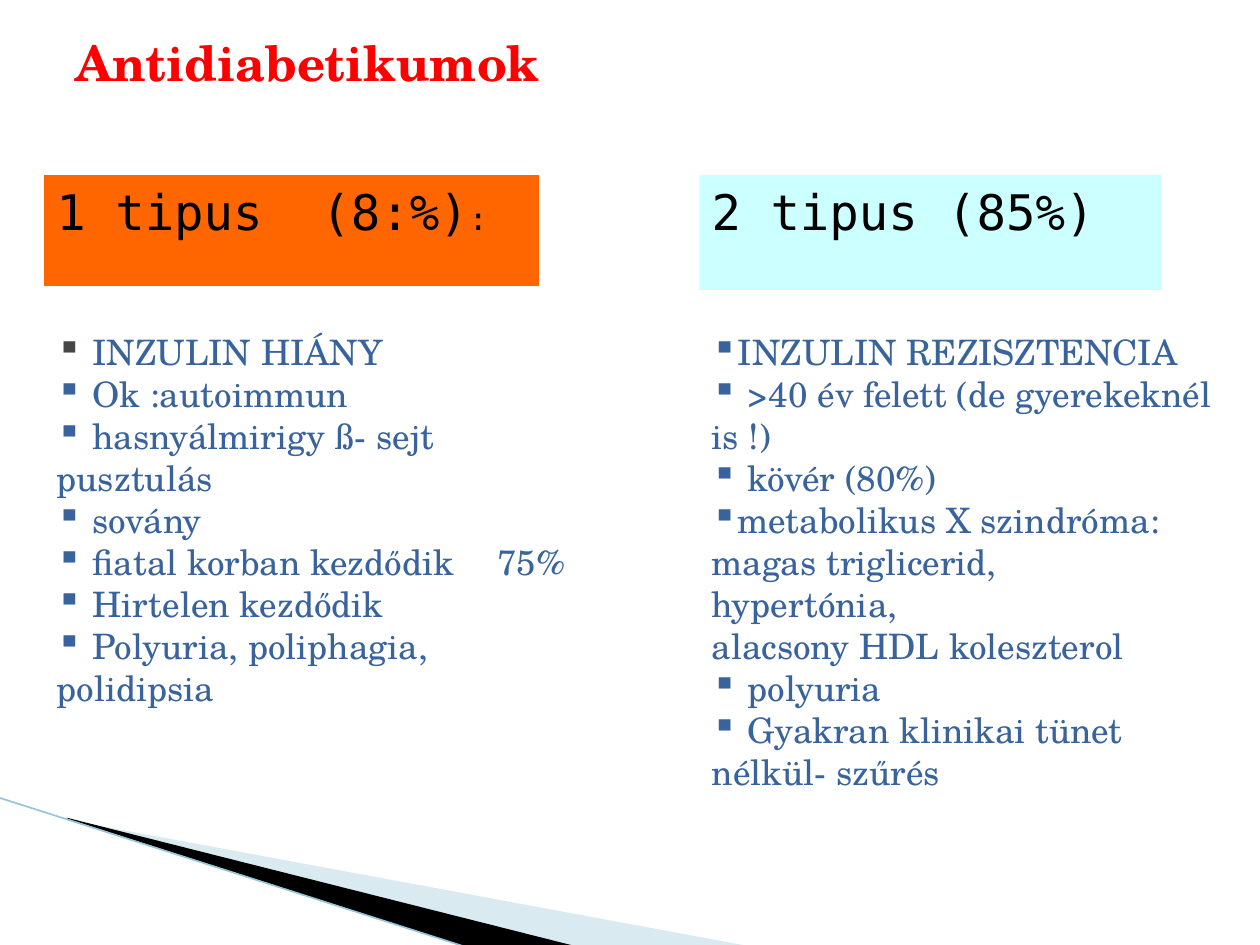
from lxml import etree
from pptx import Presentation
from pptx import util as u
from pptx.dml.color import RGBColor
from pptx.enum import shapes, text
from pptx.oxml.ns import qn

SERIF = "TeX Gyre Schola"
MONO = "DejaVu Sans Mono"
BLUE = "39639D"
BULLET = "▪"

TYPE_1 = [
    "INZULIN HIÁNY",
    "Ok :autoimmun",
    "hasnyálmirigy ß- sejt \tpusztulás",
    "sovány",
    "fiatal korban kezdődik \t75%",
    "Hirtelen kezdődik",
    "Polyuria, poliphagia, \tpolidipsia",
]
# A leading bullet sign marks a bulleted line.
TYPE_1_LINES = [f"{BULLET} {line}" for line in TYPE_1]
TYPE_2_LINES = [
    "▪INZULIN REZISZTENCIA",
    "▪ >40 év felett (de gyerekeknél is !)",
    "▪ kövér (80%)",
    "▪metabolikus X szindróma: magas triglicerid,",
    "hypertónia,",
    "alacsony HDL koleszterol",
    "▪ polyuria",
    "▪ Gyakran klinikai tünet \tnélkül- szűrés",
]


def color(hex_code):
    return RGBColor.from_string(hex_code)


def add_run(paragraph, content, *, font=SERIF, size=20, ink=BLUE, bold=False):
    run = paragraph.add_run()
    run.text = content
    run.font.name = font
    run.font.size = u.Pt(size)
    run.font.bold = bold
    run.font.color.rgb = color(ink)


def add_text_frame(slide, left, top, width, height, anchor=text.MSO_ANCHOR.TOP):
    box = slide.shapes.add_textbox(*map(u.Inches, (left, top, width, height)))
    frame = box.text_frame
    frame.word_wrap = True
    frame.vertical_anchor = anchor
    return frame


def add_title(slide, content):
    frame = add_text_frame(slide, 0.5, 0, 9, 0.99, text.MSO_ANCHOR.MIDDLE)
    add_run(frame.paragraphs[0], content, size=28, ink="FF0000", bold=True)


def add_header(slide, left, width, height, fill, content, suffix=""):
    """Coloured heading block; the suffix is set smaller."""
    block = slide.shapes.add_shape(
        shapes.MSO_SHAPE.RECTANGLE,
        *map(u.Inches, (left, 1.39, width, height)))
    block.shadow.inherit = False
    block.fill.solid()
    block.fill.fore_color.rgb = color(fill)
    block.line.fill.background()
    frame = block.text_frame
    frame.word_wrap = True
    frame.vertical_anchor = text.MSO_ANCHOR.TOP
    heading = frame.paragraphs[0]
    heading.alignment = text.PP_ALIGN.LEFT
    add_run(heading, content, font=MONO, size=28, ink="000000")
    if suffix:
        add_run(heading, suffix, font=MONO, size=18, ink="000000")


def add_features(slide, left, width, height, lines, first_bullet=BLUE):
    """List of features; a bullet takes the colour of its first run."""
    frame = add_text_frame(slide, left, 2.57, width, height)
    for index, line in enumerate(lines):
        feature = frame.paragraphs[0] if index == 0 else frame.add_paragraph()
        if line.startswith(BULLET):
            properties = feature._p.get_or_add_pPr()
            etree.SubElement(properties, qn("a:buChar")).set("char", BULLET)
            line = line[1:]
        if index == 0 and first_bullet != BLUE:
            add_run(feature, " ", ink=first_bullet)
            line = line.lstrip()
        add_run(feature, line)


def add_wedge(slide, points, fill, opacity=100):
    start, *others = [tuple(map(u.Inches, point)) for point in points]
    builder = slide.shapes.build_freeform(*start)
    builder.add_line_segments(others, close=True)
    wedge = builder.convert_to_shape()
    wedge.shadow.inherit = False
    wedge.fill.solid()
    wedge.fill.fore_color.rgb = color(fill)
    wedge.line.fill.background()
    if opacity < 100:
        tint = wedge._element.spPr.find(qn("a:solidFill"))[0]
        etree.SubElement(tint, qn("a:alpha")).set("val", str(opacity * 1000))


def add_edge(slide, start, end, ink, width):
    edge = slide.shapes.add_connector(
        shapes.MSO_CONNECTOR.STRAIGHT, *map(u.Inches, start + end))
    edge.line.color.rgb = color(ink)
    edge.line.width = u.Pt(width)
    etree.SubElement(edge._element.spPr, qn("a:effectLst"))


def add_corner_decoration(slide):
    add_wedge(slide, [(0.55, 6.51), (5.95, 7.51), (4.56, 7.51), (0.55, 6.5)],
              "A0CBDC", opacity=40)
    add_wedge(slide, [(0.53, 6.49), (4.57, 7.51), (3.72, 7.52), (0.54, 6.5)],
              "000000")
    add_edge(slide, (-0.01, 6.33), (3.71, 7.52), "97C5D8", 0.95)


def main():
    deck = Presentation()
    deck.slide_width, deck.slide_height = u.Inches(10), u.Inches(7.5)
    slide = deck.slides.add_slide(deck.slide_layouts[6])

    add_corner_decoration(slide)
    add_title(slide, "Antidiabetikumok")
    left, right = 0.35, 5.55
    add_header(slide, left, 3.93, 0.88, "FF6600", "1 tipus  (8:%)", ":")
    add_features(slide, left, 4.57, 2.79, TYPE_1_LINES, first_bullet="464646")
    add_header(slide, right, 3.67, 0.91, "CCFFFF", "2 tipus (85%)")
    add_features(slide, right, 4.25, 3.8, TYPE_2_LINES)
    deck.save("out.pptx")


if __name__ == "__main__":
    main()
